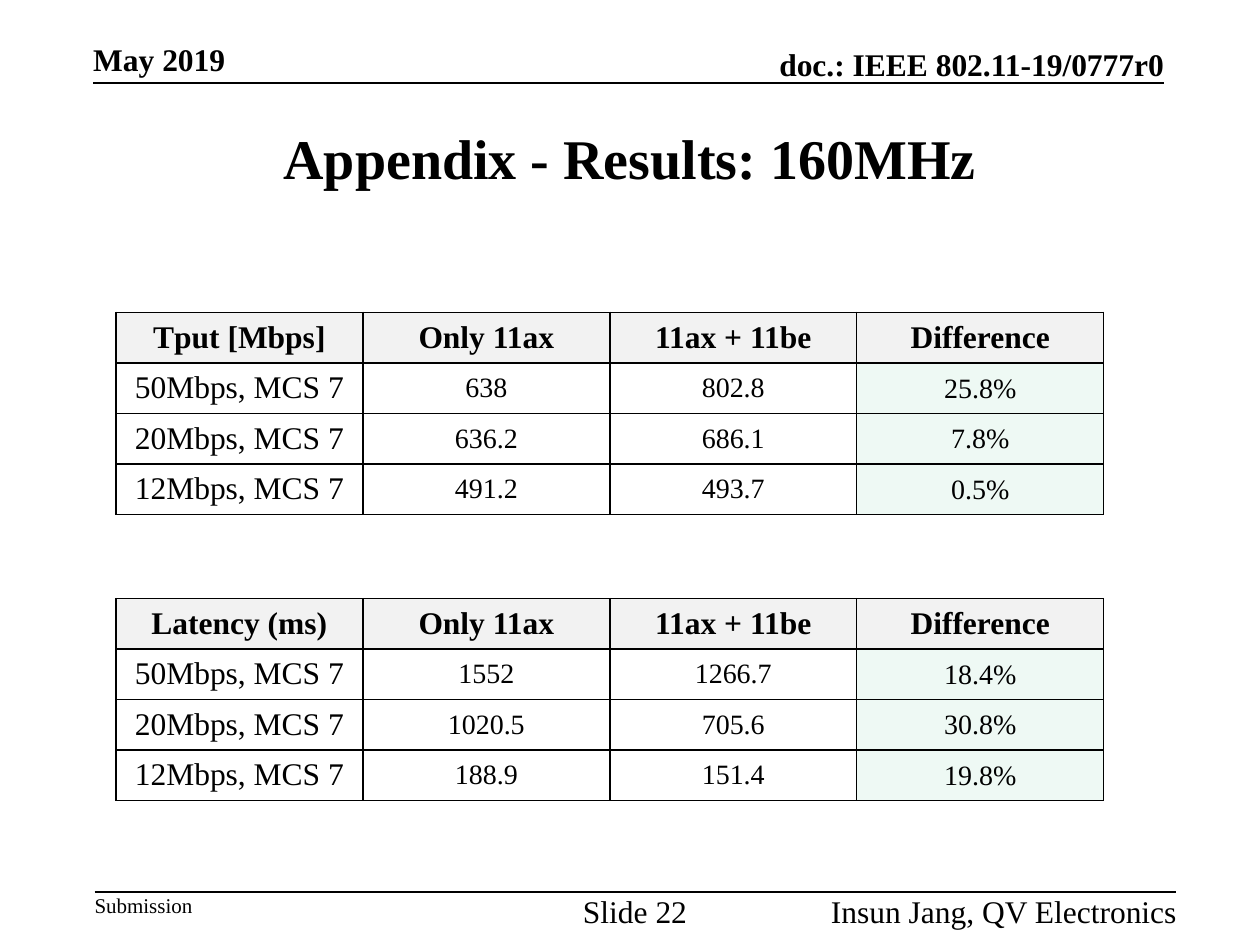
from lxml.etree import SubElement
from pptx import Presentation
from pptx.dml.color import RGBColor
from pptx.enum.text import MSO_ANCHOR as ANCHOR, PP_ALIGN as ALIGN
from pptx.oxml.ns import qn
from pptx.util import Inches, Pt

FONT = "Times New Roman"
COLORS = {"ink": "000000", "header": "F2F2F2", "difference": "EEF9F4"}
COLUMN_WIDTH = 1.96
ROW_HEIGHT = 0.4

COLUMNS = ["Only 11ax", "11ax + 11be", "Difference"]
THROUGHPUT = [
    ["Tput [Mbps]", *COLUMNS],
    ["50Mbps, MCS 7", "638", "802.8", "25.8%"],
    ["20Mbps, MCS 7", "636.2", "686.1", "7.8%"],
    ["12Mbps, MCS 7", "491.2", "493.7", "0.5%"],
]
LATENCY = [
    ["Latency (ms)", *COLUMNS],
    ["50Mbps, MCS 7", "1552", "1266.7", "18.4%"],
    ["20Mbps, MCS 7", "1020.5", "705.6", "30.8%"],
    ["12Mbps, MCS 7", "188.9", "151.4", "19.8%"],
]


def color(name):
    return RGBColor.from_string(COLORS[name])


def write(text_frame, text, size, bold=False, align=ALIGN.LEFT):
    text_frame.text = text
    paragraph = text_frame.paragraphs[0]
    paragraph.alignment = align
    font = paragraph.runs[0].font
    font.name, font.size, font.bold = FONT, Pt(size), bold
    font.color.rgb = color("ink")


def set_margins(target, left, top, right, bottom):
    target.margin_left, target.margin_top = Inches(left), Inches(top)
    target.margin_right, target.margin_bottom = Inches(right), Inches(bottom)


def add_title(slide, text):
    title = slide.shapes.title
    title.left, title.top = Inches(0.75), Inches(0.75)
    title.width, title.height = Inches(8.5), Inches(1)
    title.text_frame.vertical_anchor = ANCHOR.MIDDLE
    write(title.text_frame, text, 32, True, ALIGN.CENTER)


def add_label(slide, text, box, size=18, bold=False, align=ALIGN.LEFT,
              anchor=ANCHOR.TOP):
    text_frame = slide.shapes.add_textbox(*map(Inches, box)).text_frame
    text_frame.word_wrap = False
    text_frame.vertical_anchor = anchor
    set_margins(text_frame, 0, 0, 0, 0)
    write(text_frame, text, size, bold, align)


def add_rule(slide, left, right, y):
    """Draw a horizontal line across the slide."""
    rule = slide.shapes.add_connector(
        1, Inches(left), Inches(y), Inches(right), Inches(y))
    rule.line.color.rgb = color("ink")
    rule.line.width = Pt(1)
    SubElement(rule._element.spPr, qn("a:effectLst"))


def add_borders(cell):
    properties = cell._tc.get_or_add_tcPr()
    for position, side in enumerate(("lnL", "lnR", "lnT", "lnB")):
        line = SubElement(properties, qn(f"a:{side}"), w=str(Pt(1)))
        fill = SubElement(line, qn("a:solidFill"))
        SubElement(fill, qn("a:srgbClr"), val=COLORS["ink"])
        properties.insert(position, line)


def format_cell(cell, text, row, column):
    is_header, is_label = row == 0, column == 0
    is_difference = column == len(COLUMNS)
    cell.vertical_anchor = ANCHOR.MIDDLE
    if is_header or is_label:
        set_margins(cell, 0.1, 0.05, 0.1, 0.05)
    elif is_difference:
        set_margins(cell, 0.01, 0.01, 0.01, 0)
    else:
        set_margins(cell, 0, 0, 0, 0)
    write(cell.text_frame, text, 18 if is_header or is_label else 16,
          is_header, ALIGN.CENTER)
    if is_header or is_difference:
        cell.fill.solid()
        cell.fill.fore_color.rgb = color("header" if is_header else "difference")
    else:
        cell.fill.background()
    add_borders(cell)


def add_results_table(slide, rows, top, last_row_height=ROW_HEIGHT):
    row_count, column_count = len(rows), len(rows[0])
    table = slide.shapes.add_table(
        row_count, column_count, Inches(0.92), Inches(top),
        Inches(COLUMN_WIDTH * column_count), Inches(ROW_HEIGHT * row_count)).table
    table.horz_banding = False
    for column in table.columns:
        column.width = Inches(COLUMN_WIDTH)
    for row in table.rows:
        row.height = Inches(ROW_HEIGHT)
    table.rows[row_count - 1].height = Inches(last_row_height)
    for row, values in enumerate(rows):
        for column, text in enumerate(values):
            format_cell(table.cell(row, column), text, row, column)


def add_header(slide):
    add_label(slide, "doc.: IEEE 802.11-19/0777r0", (5.65, 0.36, 3.59, 0.3),
              bold=True, align=ALIGN.RIGHT, anchor=ANCHOR.BOTTOM)
    add_rule(slide, 0.74, 9.24, 0.66)
    add_label(slide, "May 2019", (0.74, 0.32, 1.06, 0.3),
              bold=True, anchor=ANCHOR.BOTTOM)


def add_footer(slide):
    top = 7.08
    add_label(slide, "Submission", (0.75, top, 0.78, 0.2), size=12)
    add_rule(slide, 0.75, 9.33, top)
    add_label(slide, "Insun Jang, QV Electronics", (6.14, top, 3.2, 0.28),
              align=ALIGN.RIGHT)
    add_label(slide, "Slide 22", (4.62, top, 0.84, 0.28), align=ALIGN.CENTER)


def main():
    presentation = Presentation()
    presentation.slide_width, presentation.slide_height = Inches(10), Inches(7.5)
    slide = presentation.slides.add_slide(presentation.slide_layouts[5])
    add_header(slide)
    add_title(slide, "Appendix - Results: 160MHz")
    add_results_table(slide, THROUGHPUT, 2.48, last_row_height=0.38)
    add_results_table(slide, LATENCY, 4.75)
    add_footer(slide)
    presentation.save("out.pptx")


if __name__ == "__main__":
    main()
